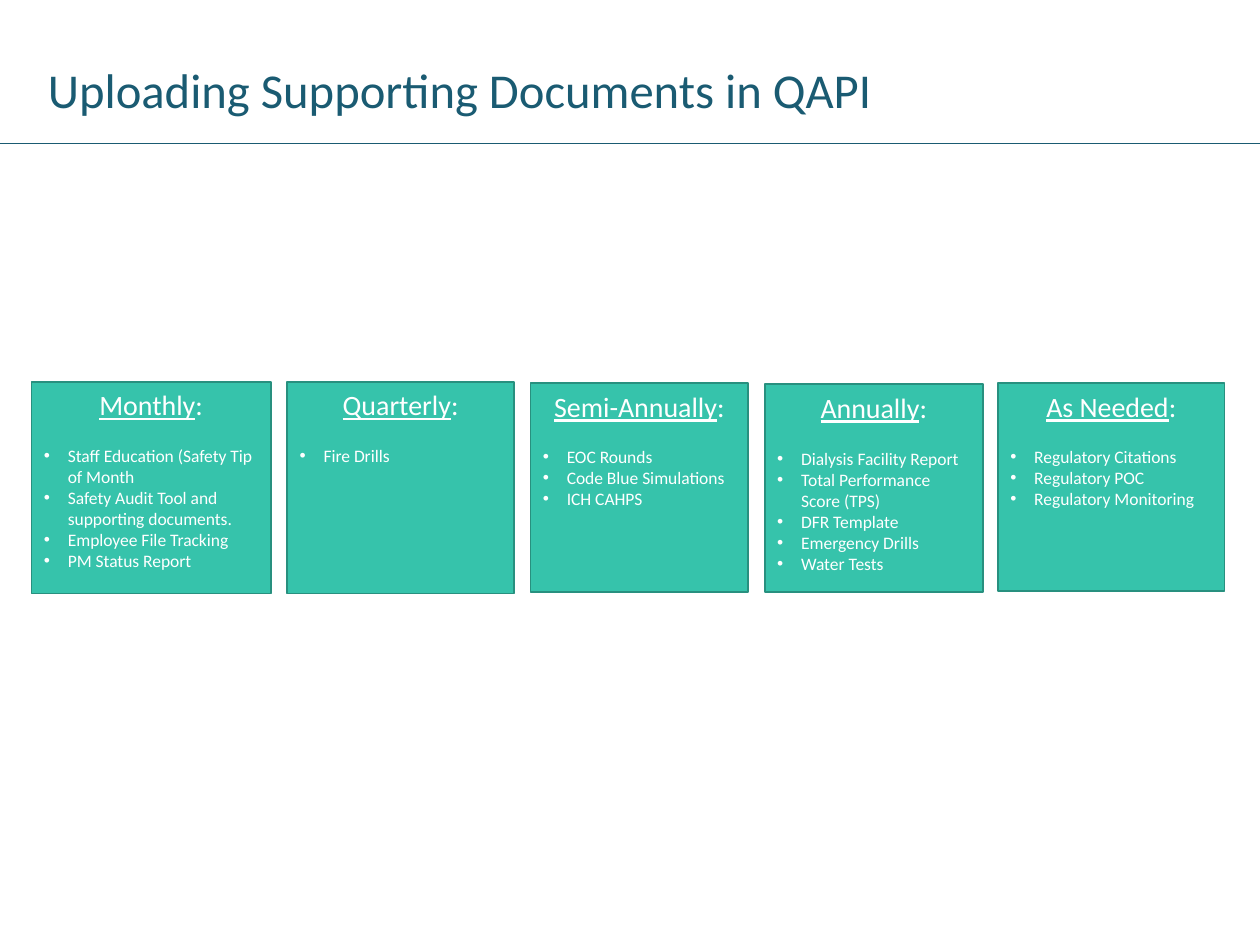
import pptx
import pptx.dml.color
import pptx.enum.shapes
import pptx.enum.text
import pptx.oxml.ns
import pptx.util
import lxml.etree

Inches = pptx.util.Inches
Pt = pptx.util.Pt
RGBColor = pptx.dml.color.RGBColor
PP_ALIGN = pptx.enum.text.PP_ALIGN
MSO_ANCHOR = pptx.enum.text.MSO_ANCHOR
qn = pptx.oxml.ns.qn

NAVY = RGBColor(0x1A, 0x5B, 0x72)
TEAL = RGBColor(0x36, 0xC3, 0xAB)
DARK_TEAL = RGBColor(0x28, 0x90, 0x7F)
WHITE = RGBColor(0xFF, 0xFF, 0xFF)

TITLE_FONT = {"name": "Calibri", "size": Pt(27.8), "bold": False}
HEADING_FONT = {"name": "Calibri", "size": Pt(16)}
ITEM_FONT = {"name": "Calibri", "size": Pt(10)}
TITLE_FRAME = {"word_wrap": True, "vertical_anchor": MSO_ANCHOR.BOTTOM,
               "auto_size": pptx.enum.text.MSO_AUTO_SIZE.NONE,
               "margin_bottom": Inches(0.05)}
TITLE_PARAGRAPH = {"alignment": PP_ALIGN.LEFT, "line_spacing": 1.5,
                   "space_before": Pt(7.5), "space_after": Pt(6)}
CARD_FRAME = {"word_wrap": True, "vertical_anchor": MSO_ANCHOR.TOP}
HEADING_GAP = Pt(13.4)
ITEM_INDENT = Inches(0.19)

SCHEDULE = [
    ("Monthly", (0.25, 3.03, 1.9, 1.68),
     ["Staff Education (Safety Tip of Month",
      "Safety Audit Tool and supporting documents.",
      "Employee File Tracking", "PM Status Report"]),
    ("Quarterly", (2.28, 3.03, 1.8, 1.68), ["Fire Drills"]),
    ("Semi-Annually", (4.21, 3.04, 1.73, 1.66),
     ["EOC Rounds", "Code Blue Simulations", "ICH CAHPS"]),
    ("Annually", (6.07, 3.05, 1.73, 1.65),
     ["Dialysis Facility Report", "Total Performance Score (TPS)",
      "DFR Template", "Emergency Drills", "Water Tests"]),
    ("As Needed", (7.92, 3.04, 1.8, 1.65),
     ["Regulatory Citations", "Regulatory POC", "Regulatory Monitoring"]),
]


def apply_format(target, values):
    for attribute, value in values.items():
        setattr(target, attribute, value)


def style_font(font, values, color):
    apply_format(font, values)
    font.color.rgb = color


def add_bullet(paragraph):
    properties = paragraph._p.get_or_add_pPr()
    properties.set("marL", str(ITEM_INDENT))
    properties.set("indent", str(-ITEM_INDENT))
    lxml.etree.SubElement(properties, qn("a:buFont"), typeface="Arial")
    lxml.etree.SubElement(properties, qn("a:buChar"), char="•")


def build_header(slide, left, top, width, height):
    title = slide.shapes.title
    apply_format(title, {"left": left, "top": top, "width": width, "height": height})
    apply_format(title.text_frame, TITLE_FRAME)
    heading = title.text_frame.paragraphs[0]
    apply_format(heading, TITLE_PARAGRAPH)
    wording = heading.add_run()
    wording.text = "Uploading Supporting Documents in QAPI"
    style_font(wording.font, TITLE_FONT, NAVY)

    rule = slide.shapes.add_connector(
        pptx.enum.shapes.MSO_CONNECTOR.STRAIGHT,
        Inches(0), Inches(1.14), Inches(10), Inches(1.14))
    rule.line.color.rgb = NAVY
    rule.line.width = Pt(1)
    lxml.etree.SubElement(rule._element.spPr, qn("a:effectLst"))


def build_card(slide, period, documents, left, top, width, height):
    card = slide.shapes.add_shape(
        pptx.enum.shapes.MSO_SHAPE.RECTANGLE, left, top, width, height)
    card.shadow.inherit = False
    card.fill.solid()
    card.fill.fore_color.rgb = TEAL
    card.line.color.rgb = DARK_TEAL
    card.line.width = Pt(1)
    apply_format(card.text_frame, CARD_FRAME)

    heading = card.text_frame.paragraphs[0]
    heading.alignment = PP_ALIGN.CENTER
    for wording, underline in ((period, True), (":", False)):
        run = heading.add_run()
        run.text = wording
        style_font(run.font, {**HEADING_FONT, "underline": underline}, WHITE)

    for position, document in enumerate(documents):
        item = card.text_frame.add_paragraph()
        item.alignment = PP_ALIGN.LEFT
        if position == 0:
            item.space_before = HEADING_GAP
        add_bullet(item)
        run = item.add_run()
        run.text = document
        style_font(run.font, ITEM_FONT, WHITE)


def main():
    presentation = pptx.Presentation()
    presentation.slide_width = Inches(10)
    presentation.slide_height = Inches(7.5)
    slide = presentation.slides.add_slide(presentation.slide_layouts[5])
    build_header(slide, Inches(0.28), Inches(0), Inches(8.07), Inches(0.99))
    for period, box, documents in SCHEDULE:
        build_card(slide, period, documents, *map(Inches, box))
    presentation.save("out.pptx")


if __name__ == "__main__":
    main()
